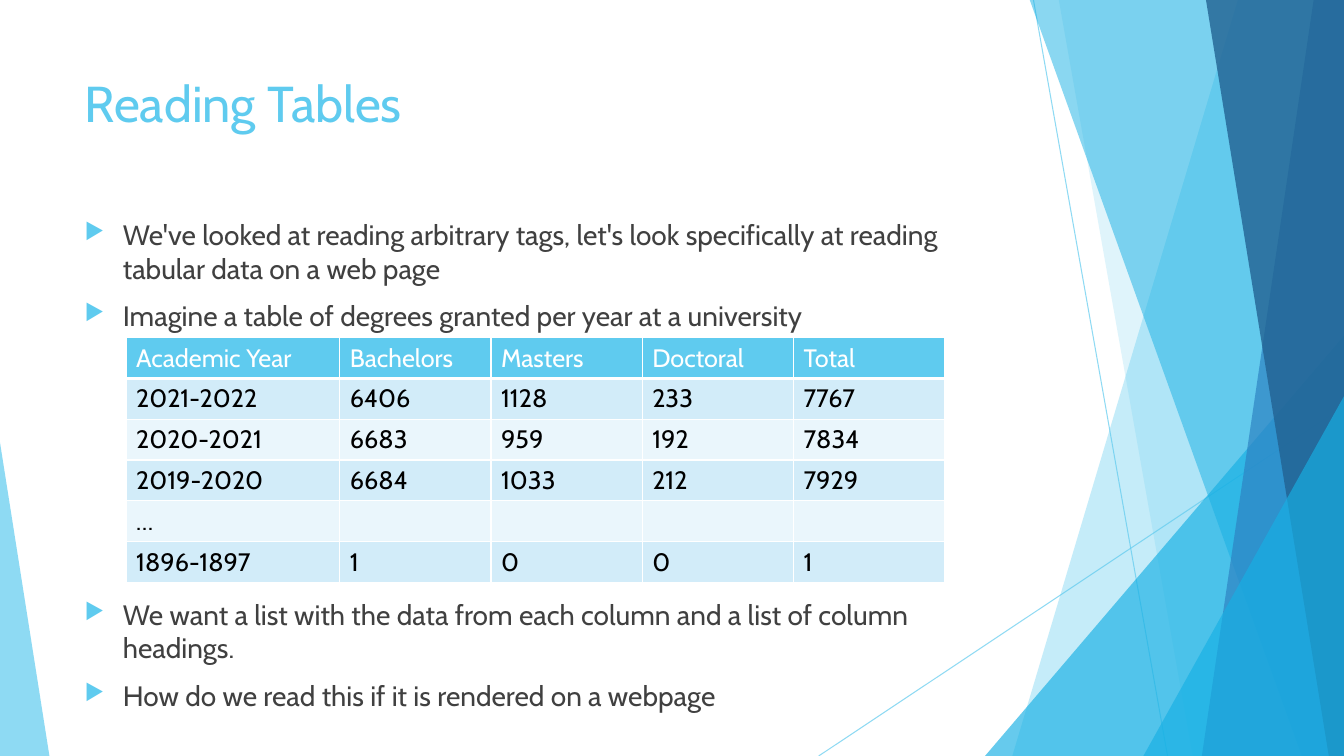
from lxml.etree import SubElement
from pptx import Presentation
from pptx.dml.color import RGBColor
from pptx.enum.shapes import MSO_CONNECTOR, MSO_SHAPE
from pptx.enum.text import MSO_ANCHOR, PP_ALIGN
from pptx.oxml.ns import qn
from pptx.util import Inches, Pt

SKY = RGBColor(0x5F, 0xCB, 0xEF)
CYAN = RGBColor(0x17, 0xB0, 0xE4)
BLUE = RGBColor(0x2E, 0x83, 0xC3)
NAVY = RGBColor(0x22, 0x62, 0x92)
GRAY = RGBColor(0x40, 0x40, 0x40)
WHITE = RGBColor(0xFF, 0xFF, 0xFF)
BLACK = RGBColor(0x00, 0x00, 0x00)
BAND_DARK = RGBColor(0xD2, 0xEC, 0xF9)
BAND_LIGHT = RGBColor(0xEA, 0xF6, 0xFC)
FONT = "Cabin"
WIDTH, HEIGHT = 13.33, 7.5
BAND_TOP = -0.01

TITLE = "Reading Tables"
TABLE_GAP = 189  # points left free for the table
BULLETS = [  # text, space before in points
    ("We've looked at reading arbitrary tags, let's look specifically at reading "
     "tabular data on a web page", 10),
    ("Imagine a table of degrees granted per year at a university", 10),
    ("We want a list with the data from each column and a list of column headings.",
     TABLE_GAP),
    ("How do we read this if it is rendered on a webpage", 10),
]
DEGREES = [
    ("Academic Year", "Bachelors", "Masters", "Doctoral", "Total"),
    ("2021-2022", "6406", "1128", "233", "7767"),
    ("2020-2021", "6683", "959", "192", "7834"),
    ("2019-2020", "6684", "1033", "212", "7929"),
    ("…", "", "", "", ""),
    ("1896-1897", "1", "0", "0", "1"),
]
COLUMN_WIDTHS = [2.12, 1.5, 1.5, 1.5, 1.5]

# Decoration, back to front
LINES = [(10.25, 0, 11.58, HEIGHT), (WIDTH, 4.03, 8.12, HEIGHT)]
DECORATION = [
    # band: left edge at top, left edge at bottom, colour, opacity
    ("band", (12.28, 10.04), SKY, 36),
    ("band", (10.5, 11.83), SKY, 20),
    # triangle: left, top, width, apex position
    ("triangle", (9.77, 3.33, 3.56, 1), CYAN, 66),
    ("band", (10.21, 12.91), CYAN, 50),
    ("band", (13.03, 11.92), BLUE, 70),
    ("band", (11.96, 13.18), NAVY, 80),
    ("triangle", (11.34, 3.93, 1.99, 1), CYAN, 66),
    ("triangle", (0, 4.39, 0.49, 0), SKY, 70),
]


def set_opacity(fill_parent, percent):
    color = next(fill_parent.iter(qn("a:srgbClr")))
    SubElement(color, qn("a:alpha"), val=str(percent * 1000))


def add_line(slide, x1, y1, x2, y2):
    line = slide.shapes.add_connector(
        MSO_CONNECTOR.STRAIGHT, Inches(x1), Inches(y1), Inches(x2), Inches(y2))
    line.line.color.rgb = SKY
    line.line.width = Pt(0.75)
    properties = line._element.spPr
    set_opacity(properties, 70)
    SubElement(properties, qn("a:effectLst"))


def add_band(slide, top_x, bottom_x):
    """Add a full-height band that reaches the right slide edge."""
    builder = slide.shapes.build_freeform(
        Inches(top_x), Inches(BAND_TOP), scale=1.0)
    corners = [(WIDTH, BAND_TOP), (WIDTH, HEIGHT), (bottom_x, HEIGHT)]
    builder.add_line_segments([(Inches(x), Inches(y)) for x, y in corners])
    return builder.convert_to_shape()


def add_triangle(slide, left, top, width, apex):
    """Add a triangle that stands on the bottom slide edge."""
    triangle = slide.shapes.add_shape(
        MSO_SHAPE.ISOSCELES_TRIANGLE, Inches(left), Inches(top),
        Inches(width), Inches(HEIGHT - top))
    triangle.adjustments[0] = apex
    return triangle


def add_decoration(slide):
    for line in LINES:
        add_line(slide, *line)
    builders = {"band": add_band, "triangle": add_triangle}
    for kind, geometry, color, opacity in DECORATION:
        shape = builders[kind](slide, *geometry)
        shape.shadow.inherit = False
        shape.fill.solid()
        shape.fill.fore_color.rgb = color
        shape.line.fill.background()
        set_opacity(shape._element.spPr, opacity)


def write(paragraph, text, size, color):
    run = paragraph.add_run()
    run.text = text
    font = {"name": FONT, "size": Pt(size), "bold": False}
    for name, value in font.items():
        setattr(run.font, name, value)
    run.font.color.rgb = color


def add_title(slide):
    title = slide.shapes.title
    place = {"left": 0.74, "top": 0.67, "width": 9.4, "height": 1.44}
    for name, value in place.items():
        setattr(title, name, Inches(value))
    title.text_frame.vertical_anchor = MSO_ANCHOR.TOP
    paragraph = title.text_frame.paragraphs[0]
    paragraph.alignment = PP_ALIGN.LEFT
    write(paragraph, TITLE, 36, SKY)


def add_bullet(paragraph):
    properties = paragraph._p.get_or_add_pPr()
    properties.set("marL", str(Inches(0.38)))
    properties.set("indent", str(Inches(-0.38)))
    bullet_color = SubElement(properties, qn("a:buClr"))
    SubElement(bullet_color, qn("a:srgbClr"), val=str(SKY))
    SubElement(properties, qn("a:buSzPct"), val="80000")
    SubElement(properties, qn("a:buChar"), char="▶")


def add_body(slide):
    body = slide.shapes.add_textbox(
        Inches(0.74), Inches(2.11), Inches(9.4), Inches(5.25))
    frame = body.text_frame
    frame.word_wrap = True
    for index, (text, space) in enumerate(BULLETS):
        paragraph = frame.add_paragraph() if index else frame.paragraphs[0]
        paragraph.space_before = Pt(space)
        add_bullet(paragraph)
        write(paragraph, text, 20, GRAY)


def add_borders(cell, bottom_width):
    properties = cell._tc.get_or_add_tcPr()
    widths = {"a:lnL": 1, "a:lnR": 1, "a:lnT": 1, "a:lnB": bottom_width}
    for position, (tag, width) in enumerate(widths.items()):
        border = properties.makeelement(qn(tag), {"w": str(Pt(width))})
        fill = SubElement(border, qn("a:solidFill"))
        SubElement(fill, qn("a:srgbClr"), val=str(WHITE))
        properties.insert(position, border)


def add_degree_table(slide):
    table = slide.shapes.add_table(
        len(DEGREES), len(COLUMN_WIDTHS), Inches(1.25), Inches(3.35),
        Inches(sum(COLUMN_WIDTHS)), Inches(2.43)).table
    for column, width in zip(table.columns, COLUMN_WIDTHS):
        column.width = Inches(width)
    for row, values in enumerate(DEGREES):
        header = row == 0
        band = BAND_DARK if row % 2 else BAND_LIGHT
        for column, value in enumerate(values):
            cell = table.cell(row, column)
            cell.fill.solid()
            cell.fill.fore_color.rgb = SKY if header else band
            add_borders(cell, 3 if header else 1)
            if value:
                write(cell.text_frame.paragraphs[0], value, 18,
                      WHITE if header else BLACK)


def main():
    presentation = Presentation()
    presentation.slide_width = Inches(WIDTH)
    presentation.slide_height = Inches(HEIGHT)
    slide = presentation.slides.add_slide(presentation.slide_layouts[5])
    add_decoration(slide)
    add_title(slide)
    add_body(slide)
    add_degree_table(slide)
    presentation.save("out.pptx")


if __name__ == "__main__":
    main()
